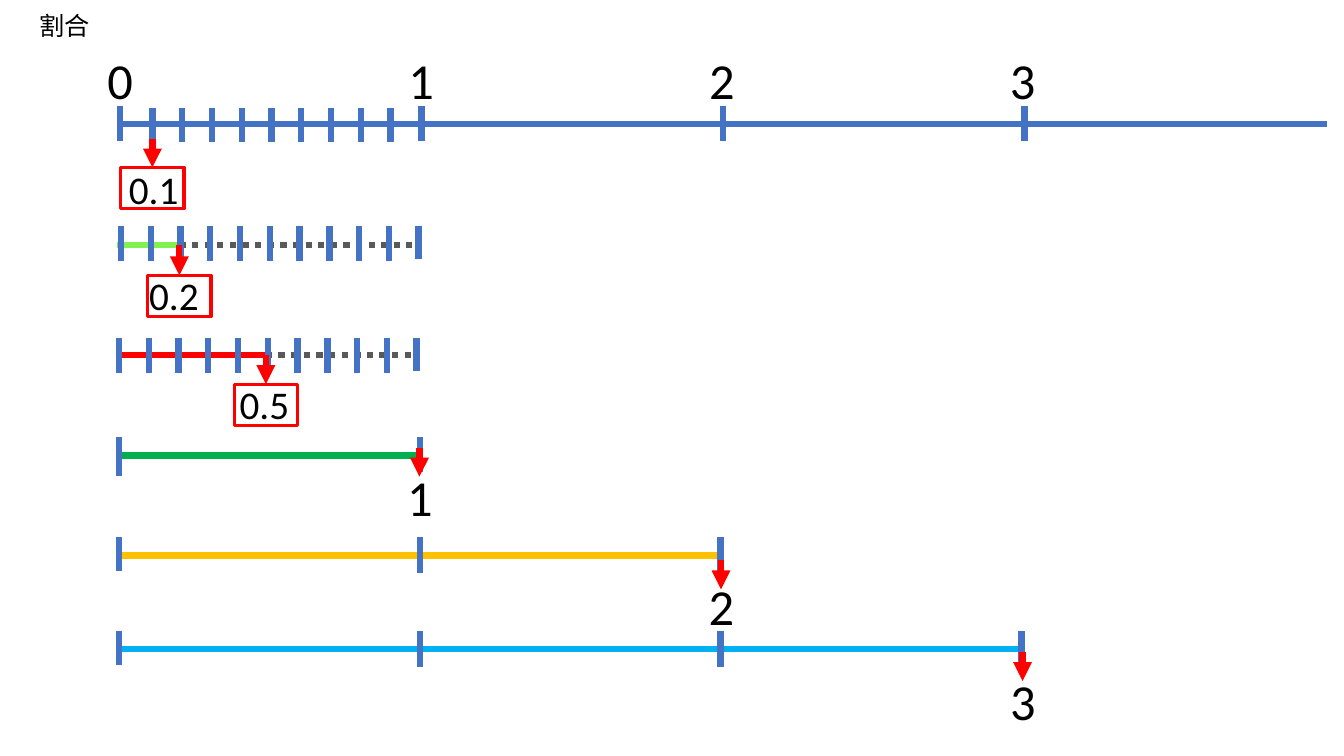
from pptx import Presentation
from pptx import util as u
from pptx.dml.color import RGBColor
from pptx.enum import dml, shapes, text
from pptx.oxml import parse_xml
from pptx.oxml.ns import nsdecls

COLOURS = {
    "scale": "4472C4", "mark": "FF0000", "rest": "595959", "text": "000000",
    "fifth": "81F051", "one": "00B050", "two": "FFC000", "three": "00B0F0",
}


class NumberLineSlide:
    """Draw number lines on a slide in one shared style, with lengths in centimetres."""

    def __init__(self, presentation):
        self.slide = presentation.slides.add_slide(presentation.slide_layouts[6])
        self.font = {"name": "Calibri"}
        self.frame = {"word_wrap": True, "auto_size": text.MSO_AUTO_SIZE.SHAPE_TO_FIT_TEXT}
        self.line_width = 4.5

    def colour(self, name):
        return RGBColor.from_string(COLOURS[name])

    def line(self, x1, y1, x2, y2, colour="scale", dash=None):
        connector = self.slide.shapes.add_connector(
            shapes.MSO_CONNECTOR.STRAIGHT, u.Cm(x1), u.Cm(y1), u.Cm(x2), u.Cm(y2))
        connector.line.color.rgb = self.colour(colour)
        for name, value in {"width": u.Pt(self.line_width), "dash_style": dash}.items():
            setattr(connector.line, name, value)
        connector._element.spPr.append(parse_xml(f"<a:effectLst {nsdecls('a')}/>"))
        return connector

    def tick(self, x, top, height):
        return self.line(x, top, x, top + height)

    def arrow(self, x, top, box=None):
        connector = self.line(x, top, x, top + 0.73, "mark")
        connector.line._get_or_add_ln().append(
            parse_xml(f'<a:tailEnd {nsdecls("a")} type="triangle"/>'))
        if box is not None:
            connector.end_connect(box, 0)

    def label(self, words, x, y, width, height, size, **formats):
        shape = self.slide.shapes.add_textbox(u.Cm(x), u.Cm(y), u.Cm(width), u.Cm(height))
        for name, value in {**self.frame, **formats}.items():
            setattr(shape.text_frame, name, value)
        paragraph = shape.text_frame.paragraphs[0]
        run = paragraph.add_run()
        run.text = words
        for name, value in {**self.font, "size": u.Pt(size)}.items():
            setattr(run.font, name, value)
        run.font.color.rgb = self.colour("text")
        return paragraph

    def number(self, value, x, y):
        self.label(str(value), x, y, 1.09, 1.8, 36)

    def box(self, x, y):
        shape = self.slide.shapes.add_shape(
            shapes.MSO_SHAPE.RECTANGLE, u.Cm(x), u.Cm(y), u.Cm(1.6), u.Cm(1.04))
        shape.shadow.inherit = False
        shape.fill.background()
        shape.line.color.rgb = self.colour("mark")
        shape.line.width = u.Pt(2.25)
        return shape

    def scale(self):
        for unit in range(4):
            x = 3.02 + 7.6 * unit
            self.line(x, 3.12, x + 7.62, 3.12)
            self.tick(x, 2.67, 0.88)
            self.number(unit, 2.46 + 7.58 * unit, 1.12)
        for tenth in range(9):
            self.tick(3.84 + 0.75 * tenth, 2.72, 0.87)

    def tenths_row(self, y, colour, split, end, first_tick, top):
        self.line(2.95, y, split, y, colour)
        self.line(split, y, end, y, "rest", dml.MSO_LINE.ROUND_DOT)
        for tenth in range(11):
            self.tick(first_tick + 0.75 * tenth, top, 0.83 if tenth == 10 else 0.89)

    def units_row(self, y, colour, tick_heights):
        for unit in range(len(tick_heights) - 1):
            x = 2.95 + 7.59 * unit
            self.line(x, y, x + 7.62, y, colour)
        for unit, height in enumerate(tick_heights):
            self.tick(3 + 7.58 * unit, y - 0.46, height)


def main():
    presentation = Presentation()
    presentation.slide_width, presentation.slide_height = u.Cm(33.87), u.Cm(19.05)
    ratios = NumberLineSlide(presentation)

    title = ratios.label("割合", 0.74, 0.23, 1.91, 1.42, 18,
                         auto_size=text.MSO_AUTO_SIZE.NONE)
    title.line_spacing = 0.9

    ratios.scale()
    ratios.tenths_row(6.17, "fifth", 4.52, 10.39, 3.05, 5.69)
    ratios.tenths_row(8.94, "mark", 6.7, 10.44, 3, 8.51)
    unit_rows = [
        (11.48, "one", (0.97, 0.87), 11.28, 11.61),
        (14, "two", (0.84, 0.89, 0.97), 14.12, 14.38),
        (16.36, "three", (0.86, 0.91, 0.91, 0.91), 16.43, 16.76),
    ]
    for value, (y, colour, heights, arrow_top, label_top) in enumerate(unit_rows, 1):
        arrow_x = 2.97 + 7.6 * value
        ratios.units_row(y, colour, heights)
        ratios.number(value, arrow_x - 0.56, label_top)
        ratios.arrow(arrow_x, arrow_top)

    decimals = [
        ("0.1", 3.84, 3.49, 4.22, 3, 4.04, 2.44),
        ("0.2", 4.52, 6.17, 6.94, 3.51, 6.71, 2.44),
        ("0.5", 6.7, 8.94, 9.68, 5.79, 9.45, 1.91),
    ]
    for words, arrow_x, arrow_top, box_top, label_x, label_top, width in decimals:
        ratios.label(words, label_x, label_top, width, 1.45, 28)
        box = ratios.box(arrow_x - 0.8, box_top)
        ratios.arrow(arrow_x, arrow_top, box)

    presentation.save("out.pptx")


if __name__ == "__main__":
    main()
